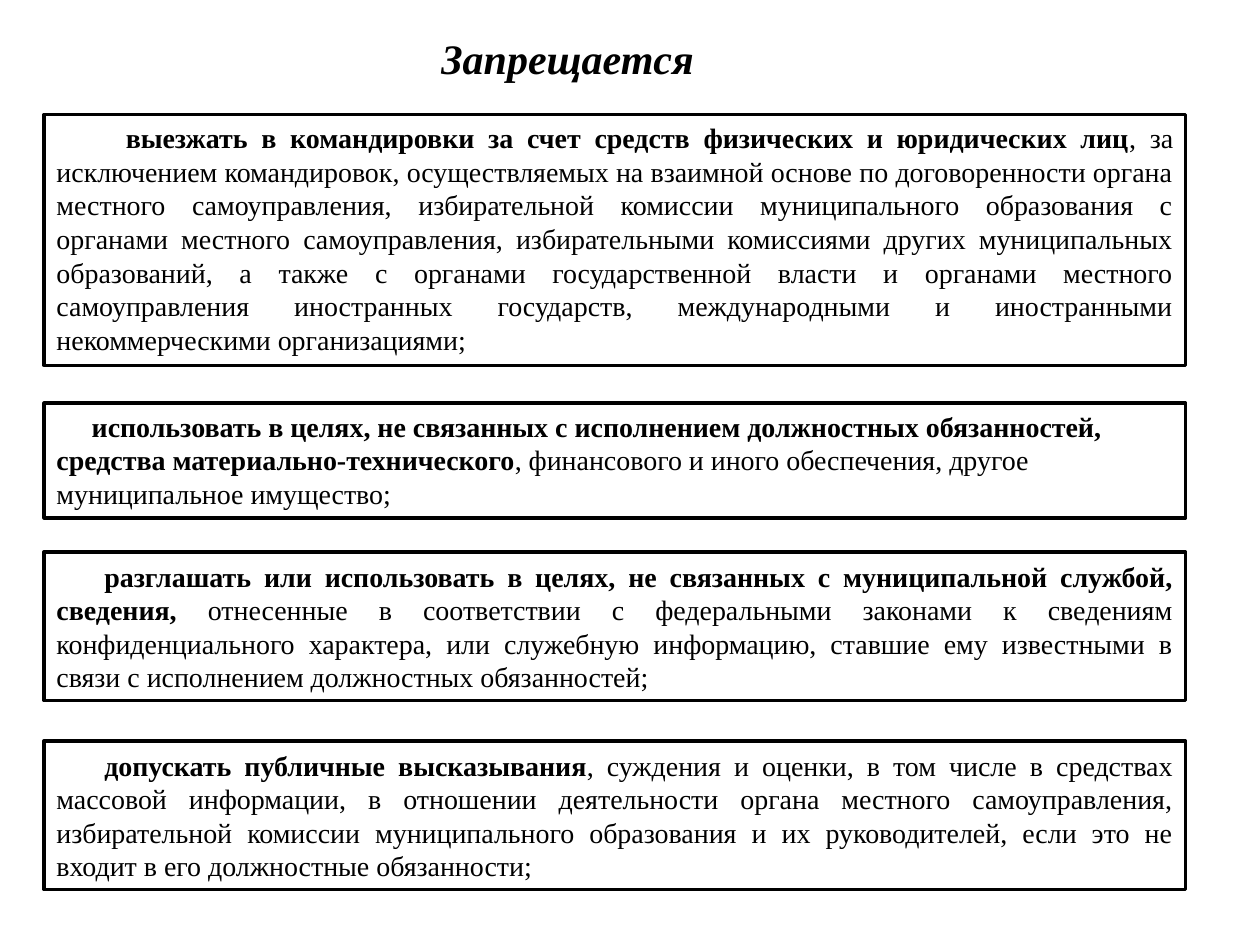
from dataclasses import dataclass

from pptx import Presentation
from pptx.dml.color import RGBColor
from pptx.enum.shapes import MSO_SHAPE
from pptx.enum.text import MSO_ANCHOR, MSO_AUTO_SIZE, PP_ALIGN
from pptx.util import Inches, Pt

RECT = MSO_SHAPE.RECTANGLE
TOP, MIDDLE = MSO_ANCHOR.TOP, MSO_ANCHOR.MIDDLE
LEFT, CENTER, JUSTIFY = PP_ALIGN.LEFT, PP_ALIGN.CENTER, PP_ALIGN.JUSTIFY
GROW = MSO_AUTO_SIZE.SHAPE_TO_FIT_TEXT

COLS, ROWS = 100, 75  # fine grid over the slide


@dataclass(frozen=True)
class Theme:
    font: str = "Times New Roman"
    ink: RGBColor = RGBColor(0, 0, 0)
    paper: RGBColor = RGBColor(255, 255, 255)
    title_size: int = 24
    body_size: int = 16
    border: int = 2


class Deck:
    def __init__(self, theme):
        self.theme = theme
        self.prs = Presentation()
        self.prs.slide_width, self.prs.slide_height = Inches(10), Inches(7.5)
        self.slide = self.prs.slides.add_slide(self.prs.slide_layouts[6])

    def place(self, col, row, cols, rows):
        w, h = self.prs.slide_width / COLS, self.prs.slide_height / ROWS
        return [round(n) for n in (col * w, row * h, cols * w, rows * h)]

    def set_text(self, sp, runs, size, align, anchor=TOP, indent=0):
        """Fill a shape with one paragraph of (text, bold, italic) runs."""
        tf = sp.text_frame
        tf.word_wrap, tf.auto_size, tf.vertical_anchor = True, GROW, anchor
        p = tf.paragraphs[0]
        p.alignment = align
        if indent:
            p._p.get_or_add_pPr().set("indent", str(Inches(indent)))
        for text, bold, italic in runs:
            r = p.add_run()
            r.text = text
            font = r.font
            font.name, font.size = self.theme.font, Pt(size)
            font.bold, font.italic = bold, italic
            font.color.rgb = self.theme.ink

    def title(self, text, *cell):
        sp = self.slide.shapes.add_textbox(*self.place(*cell))
        self.set_text(sp, [(text, True, True)], self.theme.title_size, CENTER)

    def rule_box(self, lead, rest, row, rows, align, anchor, indent):
        """Bordered box: bold lead-in followed by regular text."""
        cell = self.place(3.5, row, 90.6, rows)
        sp = self.slide.shapes.add_shape(RECT, *cell)
        sp.shadow.inherit = False
        sp.fill.solid()
        sp.fill.fore_color.rgb = self.theme.paper
        sp.line.color.rgb = self.theme.ink
        sp.line.width = Pt(self.theme.border)
        runs = [(lead, True, False), (rest, False, False)]
        self.set_text(sp, runs, self.theme.body_size, align, anchor, indent)


# Lead-in, continuation, top row, rows, alignment, anchor, first-line indent
PROHIBITIONS = [
    ("выезжать в командировки за счет средств физических и юридических лиц",
     ", за исключением командировок, осуществляемых на взаимной основе по "
     "договоренности органа местного самоуправления, избирательной комиссии "
     "муниципального образования с органами местного самоуправления, "
     "избирательными комиссиями других муниципальных образований, а также с "
     "органами государственной власти и органами местного самоуправления "
     "иностранных государств, международными и иностранными "
     "некоммерческими организациями;",
     9.1, 19.9, JUSTIFY, TOP, 0.55),
    ("использовать в целях, не связанных с исполнением должностных "
     "обязанностей, средства материально-технического",
     ", финансового и иного обеспечения, другое муниципальное имущество;",
     32, 9.1, LEFT, TOP, 0.28),
    ("разглашать или использовать в целях, не связанных с муниципальной "
     "службой, сведения,",
     " отнесенные в соответствии с федеральными законами к сведениям "
     "конфиденциального характера, или служебную информацию, ставшие ему "
     "известными в связи с исполнением должностных обязанностей;",
     43.8, 11.8, JUSTIFY, MIDDLE, 0.38),
    ("допускать публичные высказывания",
     ", суждения и оценки, в том числе в средствах массовой информации, в "
     "отношении деятельности органа местного самоуправления, избирательной "
     "комиссии муниципального образования и их руководителей, если это не "
     "входит в его должностные обязанности;",
     58.8, 11.8, JUSTIFY, MIDDLE, 0.38),
]


def main():
    deck = Deck(Theme())
    # Heading
    deck.title("Запрещается", 32.7, 2.1, 24.7, 5.1)
    # Prohibitions
    for item in PROHIBITIONS:
        deck.rule_box(*item)
    deck.prs.save("out.pptx")


if __name__ == "__main__":
    main()
